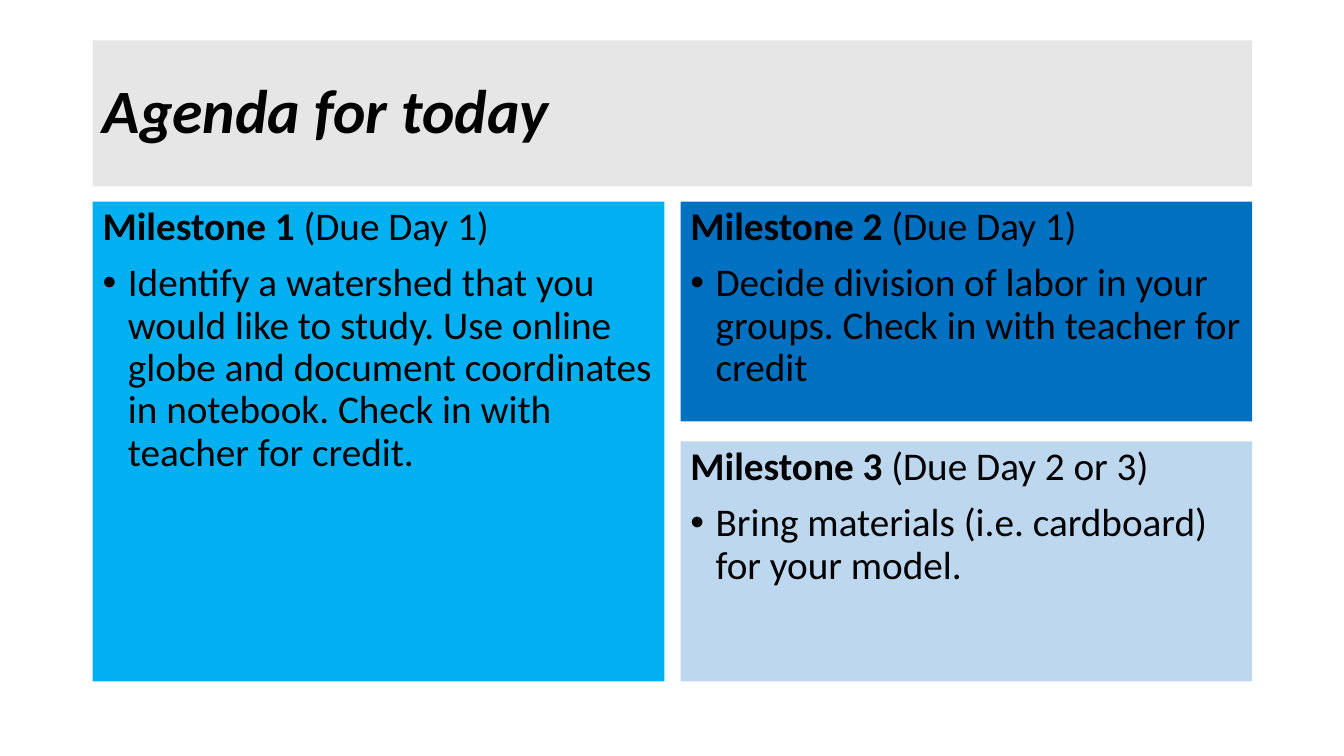
from lxml import etree
from pptx import Presentation
from pptx.dml.color import RGBColor
from pptx.enum.text import MSO_ANCHOR, MSO_AUTO_SIZE, PP_ALIGN
from pptx.oxml.ns import qn
from pptx.util import Inches, Pt

LEFT = PP_ALIGN.LEFT
MIDDLE = MSO_ANCHOR.MIDDLE
NO_FIT = MSO_AUTO_SIZE.NONE
BLACK = RGBColor(0x00, 0x00, 0x00)
GRAY = RGBColor(0xE7, 0xE6, 0xE6)
SKY = RGBColor(0x00, 0xB0, 0xF0)
BLUE = RGBColor(0x00, 0x70, 0xC0)
PALE = RGBColor(0xBD, 0xD7, 0xEE)

MARGIN = 0.92
CONTENT_WIDTH = 11.5
COLUMN_WIDTH = 5.67
COLUMNS = [MARGIN, MARGIN + CONTENT_WIDTH - COLUMN_WIDTH]
TOP, BOTTOM = 2, 6.76
UPPER_HEIGHT = 2.18
LOWER_TOP = TOP + UPPER_HEIGHT + 0.2

MILESTONES = [
    (COLUMNS[0], TOP, BOTTOM - TOP, SKY, "Milestone 1 ", "(Due Day 1)",
     "Identify a watershed that you would like to study. Use online globe "
     "and document coordinates in notebook. Check in with teacher for credit."),
    (COLUMNS[1], TOP, UPPER_HEIGHT, BLUE, "Milestone 2 ", "(Due Day 1)",
     "Decide division of labor in your groups. Check in with teacher for credit"),
    (COLUMNS[1], LOWER_TOP, BOTTOM - LOWER_TOP, PALE, "Milestone 3 ", "(Due Day 2 or 3)",
     "Bring materials (i.e. cardboard) for your model."),
]


def fill_shape(shape, color):
    shape.fill.solid()
    shape.fill.fore_color.rgb = color
    shape.text_frame.word_wrap = True
    shape.text_frame.auto_size = NO_FIT


def add_run(paragraph, text, size, bold=False, italic=False):
    paragraph.alignment = LEFT
    paragraph.line_spacing = 0.9
    run = paragraph.add_run()
    run.text = text
    run.font.name = "Calibri"
    run.font.size = Pt(size)
    run.font.bold = bold
    run.font.italic = italic
    run.font.color.rgb = BLACK


presentation = Presentation()
presentation.slide_width = Inches(13.33)
presentation.slide_height = Inches(7.5)
slide = presentation.slides.add_slide(presentation.slide_layouts[5])

title = slide.shapes.title
title.left, title.top = Inches(MARGIN), Inches(0.4)
title.width, title.height = Inches(CONTENT_WIDTH), Inches(1.45)
fill_shape(title, GRAY)
title.text_frame.vertical_anchor = MIDDLE
add_run(title.text_frame.paragraphs[0], "Agenda for today", 44, bold=True, italic=True)

for left, top, height, color, name, due, task in MILESTONES:
    card = slide.shapes.add_textbox(
        Inches(left), Inches(top), Inches(COLUMN_WIDTH), Inches(height))
    fill_shape(card, color)
    heading = card.text_frame.paragraphs[0]
    add_run(heading, name, 28, bold=True)
    add_run(heading, due, 28)

    bullet = card.text_frame.add_paragraph()
    bullet.space_before = Pt(10)
    add_run(bullet, task, 28)
    properties = bullet._p.get_or_add_pPr()
    properties.set("marL", str(Inches(0.25)))
    properties.set("indent", str(Inches(-0.25)))
    etree.SubElement(properties, qn("a:buFont"), typeface="Arial")
    etree.SubElement(properties, qn("a:buChar"), char="•")

presentation.save("out.pptx")
